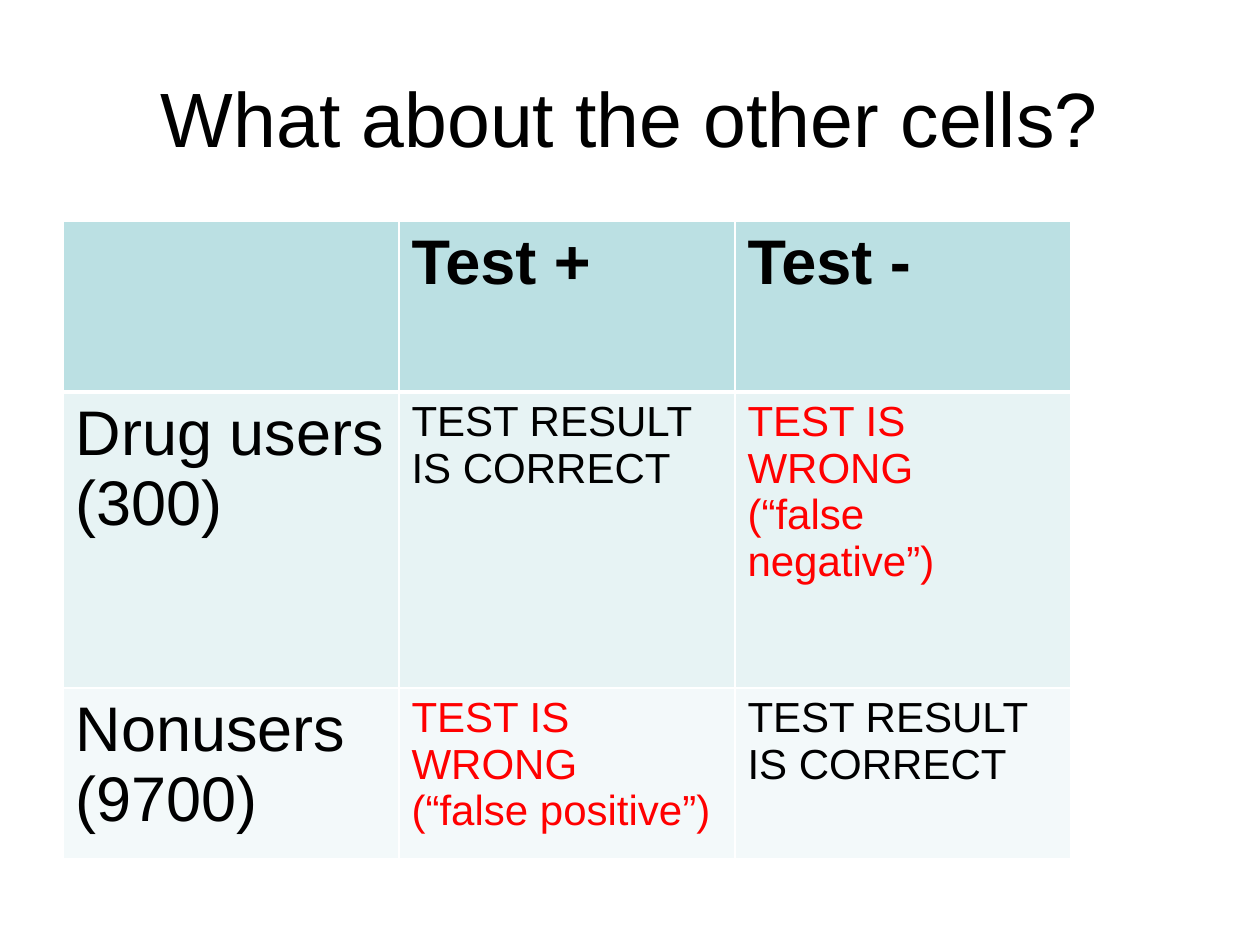
from lxml.etree import SubElement
from pptx import Presentation
from pptx.dml.color import RGBColor
from pptx.enum.text import MSO_ANCHOR, PP_ALIGN
from pptx.oxml.ns import qn
from pptx.util import Pt

EMU_PER_PX = 914400 // 126
FONT = "Arial"
BLACK = RGBColor(0x00, 0x00, 0x00)
RED = RGBColor(0xFF, 0x00, 0x00)
WHITE = RGBColor(0xFF, 0xFF, 0xFF)
HEADER_TEAL = RGBColor(0xBB, 0xE0, 0xE3)
LIGHT_TEAL = RGBColor(0xE7, 0xF3, 0xF4)
PALE_TEAL = RGBColor(0xF3, 0xF9, 0xFA)

COLUMN_WIDTH = 336
ROW_HEIGHTS = [171, 296, 171]
ROW_FILLS = [HEADER_TEAL, LIGHT_TEAL, PALE_TEAL]
CORRECT = "TEST RESULT\nIS CORRECT"
OUTCOMES = [
    ["", "Test +", "Test -"],
    ["Drug users (300)", CORRECT, "TEST IS WRONG\n(“false negative”)"],
    ["Nonusers (9700)", "TEST IS WRONG\n(“false positive”)", CORRECT],
]


def px(length):
    return length * EMU_PER_PX


def write_text(frame, text, size, color=BLACK, bold=False, align=PP_ALIGN.LEFT):
    frame.word_wrap = True
    for index, line in enumerate(text.split("\n")):
        paragraph = frame.add_paragraph() if index else frame.paragraphs[0]
        paragraph.alignment = align
        run = paragraph.add_run()
        run.text = line
        run.font.name = FONT
        run.font.size = Pt(size)
        run.font.bold = bold
        run.font.color.rgb = color


def add_title(slide, text):
    title = slide.shapes.add_textbox(px(63), px(38), px(1134), px(157))
    title.text_frame.vertical_anchor = MSO_ANCHOR.MIDDLE
    write_text(title.text_frame, text, size=44, align=PP_ALIGN.CENTER)


def add_borders(cell, top, bottom):
    properties = cell._tc.get_or_add_tcPr()
    for side, width in (("L", 1), ("R", 1), ("T", top), ("B", bottom)):
        border = SubElement(properties, qn(f"a:ln{side}"), w=str(Pt(width)))
        fill = SubElement(border, qn("a:solidFill"))
        SubElement(fill, qn("a:srgbClr"), val=str(WHITE))


def fill_cell(cell, text, row, column):
    add_borders(cell, top=3 if row == 1 else 1, bottom=3 if row == 0 else 1)
    cell.fill.solid()
    cell.fill.fore_color.rgb = ROW_FILLS[row]
    if text:
        is_label = row == 0 or column == 0
        write_text(
            cell.text_frame,
            text,
            size=36 if is_label else 24,
            color=RED if "WRONG" in text else BLACK,
            bold=row == 0,
        )


def add_outcome_table(slide):
    rows, columns = len(OUTCOMES), len(OUTCOMES[0])
    table = slide.shapes.add_table(
        rows, columns, px(63), px(221), px(COLUMN_WIDTH * columns), px(sum(ROW_HEIGHTS))
    ).table
    for column in table.columns:
        column.width = px(COLUMN_WIDTH)
    for row, outcomes in enumerate(OUTCOMES):
        table.rows[row].height = px(ROW_HEIGHTS[row])
        for column, text in enumerate(outcomes):
            fill_cell(table.cell(row, column), text, row, column)


def main():
    presentation = Presentation()
    presentation.slide_width = px(1260)
    presentation.slide_height = px(945)
    slide = presentation.slides.add_slide(presentation.slide_layouts[6])
    add_title(slide, "What about the other cells?")
    add_outcome_table(slide)
    presentation.save("out.pptx")


if __name__ == "__main__":
    main()
